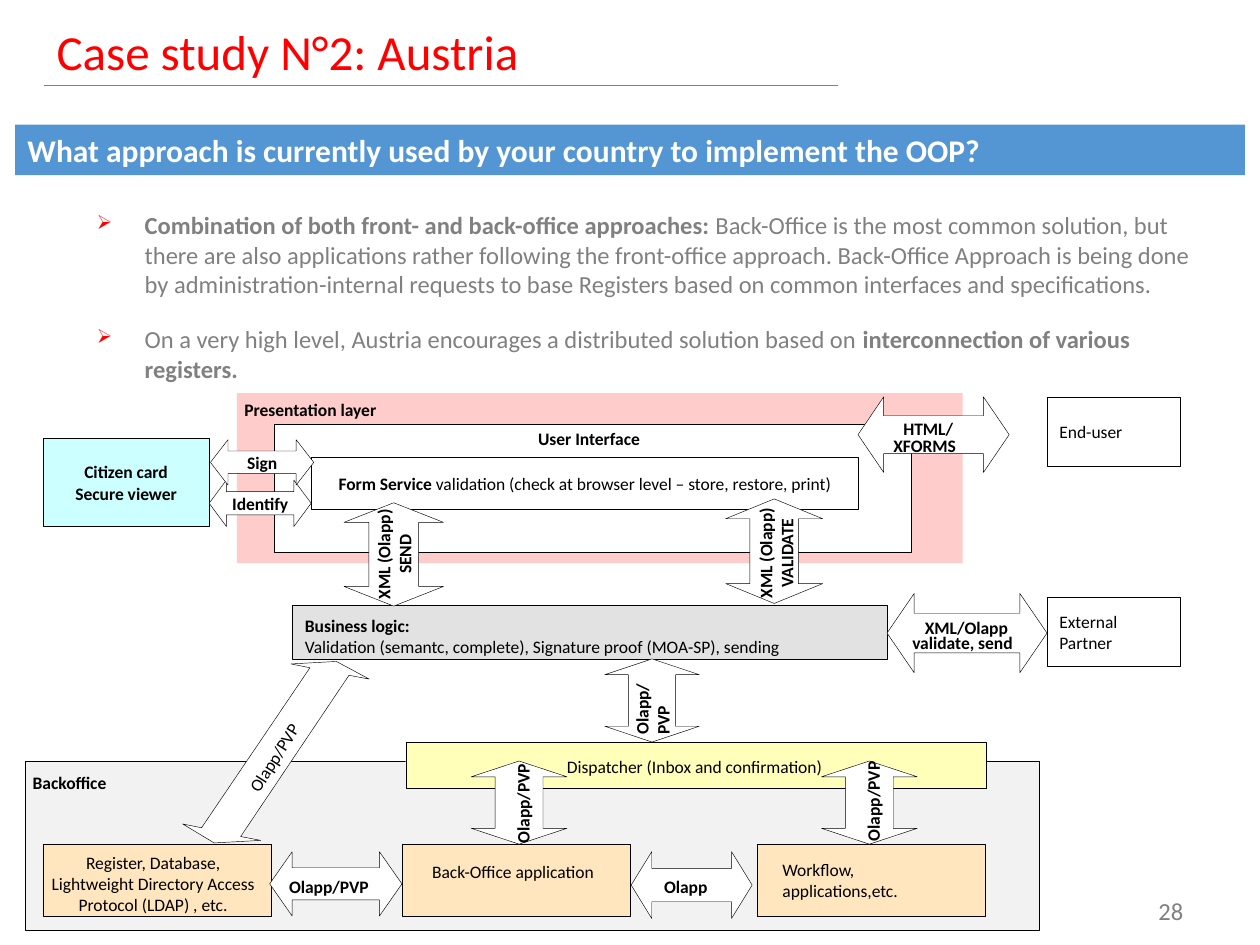
from lxml.etree import SubElement
from pptx import Presentation
from pptx.dml.color import RGBColor
from pptx.enum.shapes import MSO_CONNECTOR as Conn, MSO_SHAPE as Shape
from pptx.enum.text import MSO_ANCHOR as Anchor, PP_ALIGN as Align
from pptx.oxml.ns import qn
from pptx.util import Inches, Pt

LEFT, MID, RIGHT = Align.LEFT, Align.CENTER, Align.RIGHT
color = RGBColor.from_string

deck = Presentation()
deck.slide_width, deck.slide_height = Inches(10), Inches(7.5)
slide = deck.slides.add_slide(deck.slide_layouts[5])
shapes = slide.shapes
cell = deck.slide_width // 100  # grid of 100 columns by 75 rows


def paint(shape, fill, line="000000"):
    shape.shadow.inherit = False
    shape.fill.solid()
    shape.fill.fore_color.rgb = color(fill)
    if line:
        shape.line.color.rgb = color(line)
        shape.line.width = Pt(0.25)
    else:
        shape.line.fill.background()


def write(shape, text, size=10, ink="000000", bold=False, align=LEFT,
          anchor=Anchor.TOP, wrap=True):
    """Lines split at newlines; each | switches between bold and regular."""
    frame = shape.text_frame
    frame.word_wrap, frame.vertical_anchor = wrap, anchor
    frame.text = text.replace("|", "")
    for para, line in zip(frame.paragraphs, text.split("\n")):
        para.alignment = align
        para.text = ""
        for i, part in enumerate(line.split("|")):
            if part:
                run = para.add_run()
                run.text = part
                run.font.name, run.font.size = "Calibri", Pt(size)
                run.font.bold = bold != (i % 2 == 1)
                run.font.color.rgb = color(ink)


# Title, rule and banner
title = shapes.title
title.left, title.top, title.width, title.height = [
    round(n * cell) for n in (3.5, 1.3, 63, 5.5)]
write(title, "Case study N°2: Austria", 28, "FF0000", anchor=Anchor.MIDDLE)
rule = shapes.add_connector(
    Conn.STRAIGHT, *[round(n * cell) for n in (66.5, 6.8, 3.5, 6.8)])
rule.line.color.rgb = color("808080")
rule.line.width = Pt(0.75)
SubElement(rule._element.spPr, qn("a:effectLst"))
banner = shapes.add_shape(
    Shape.RECTANGLE, *[round(n * cell) for n in (1.2, 9.9, 97.6, 4)])
paint(banner, "5496D4", None)
write(banner, "What approach is currently used by your country to implement "
      "the OOP?", 18, "FFFFFF", True)

# Bulleted points
body = shapes.add_textbox(*[round(n * cell) for n in (6.7, 16.2, 90, 14.5)])
write(body, "|Combination of both front- and back-office approaches: |"
      "Back-Office is the most common solution, but there are also "
      "applications rather following the front-office approach. Back-Office "
      "Approach is being done by administration-internal requests to base "
      "Registers based on common interfaces and specifications.\n"
      "On a very high level, Austria encourages a distributed solution based "
      "on |interconnection of various registers.", 14, "808080")
for i, para in enumerate(body.text_frame.paragraphs):
    props = para._p.get_or_add_pPr()
    props.set("marL", str(Inches(0.38)))
    props.set("indent", str(-Inches(0.38)))
    tint = SubElement(props, qn("a:buClr"))
    SubElement(tint, qn("a:srgbClr"), val="FF0000")
    SubElement(props, qn("a:buSzPct"), val="80000")
    SubElement(props, qn("a:buChar"), char="➢")
    para.space_after = Pt(12)
    if i:
        para.space_before = Pt(2.8)

# Layers and boxes: place, fill, outline, text, bold, alignment
boxes = [
    ((2, 60.4, 80.5, 13.4), "F2F2F2", "000000", "", False, LEFT),
    ((18.8, 31.2, 57.6, 13.5), "FFCCCC", None, "", False, LEFT),
    ((21.8, 33.7, 50.5, 10.1), "FFFFFF", "000000", "", False, LEFT),
    ((24.7, 36.3, 43.4, 4.1), "FFFFFF", "000000",
     "Form Service |validation (check at browser level – store, restore, "
     "print)", True, MID),
    ((23.2, 48, 47.2, 4.3), "E2E2E2", "000000", "", False, LEFT),
    ((32.2, 58.9, 46.1, 3.7), "FFFFB9", "000000", "", False, LEFT),
    ((83.1, 31.5, 10.6, 5.5), "FFFFFF", "000000", "End-user", False, LEFT),
    ((83.1, 47.4, 10.6, 5.5), "FFFFFF", "000000", "External Partner", False,
     LEFT),
    ((3.4, 34.8, 13.2, 7), "CCFFFF", "000000", "Citizen card\nSecure viewer",
     True, MID),
]
boxes += [((x, 67, 18.1, 5.7), "FFE6BF", "000000", "", False, LEFT)
          for x in (3.4, 31.9, 60.1)]
for place, fill, line, text, bold, align in boxes:
    box = shapes.add_shape(Shape.RECTANGLE, *[round(n * cell) for n in place])
    paint(box, fill, line)
    if text:
        write(box, text, bold=bold, align=align, anchor=Anchor.MIDDLE)

# Two-headed arrows: place and text; the tall ones stand upright
arrows = [
    ((68.1, 31.5, 12, 6), ""), ((70.4, 47.1, 12.7, 6.3), ""),
    ((50.1, 67.6, 9.6, 5.3), ""), ((21.4, 67.6, 10.5, 5.1), ""),
    ((16.6, 38.1, 8.1, 3.7), "Identify"), ((16.7, 34.9, 8.2, 3.6), "Sign"),
    ((57.6, 39.6, 7.7, 8.3), ""), ((27.3, 39.9, 7.9, 8.2), ""),
    ((48, 52.3, 7.5, 6.6), ""), ((37.4, 60.4, 7.6, 6.6), ""),
    ((65.2, 60.4, 7.6, 6.6), ""),
]
outlines = []
for (x, y, w, h), text in arrows:
    tall = text == "" and w / h < 1.2
    tip = 0.19 if tall else 0.17
    far = 1 - tip
    pts = [(0, 0.5), (tip, 0), (tip, 0.25), (far, 0.25), (far, 0), (1, 0.5),
           (far, 1), (far, 0.75), (tip, 0.75), (tip, 1), (tip, 0.75)]
    pts[-2:] = [(tip, 1)]
    if tall:
        pts = [(b, a) for a, b in pts]
    outlines.append(([(x + a * w, y + b * h) for a, b in pts], text))
slant = [(16, 65.7), (14.5, 65.4), (17, 66.9), (20.7, 66.7), (19.1, 66.4),
         (27.7, 53.6), (29.3, 53.9), (26.7, 52.5), (23.1, 52.7), (24.6, 53)]
outlines.append((slant, ""))
for pts, text in outlines:
    first, *rest = [(round(a * cell), round(b * cell)) for a, b in pts]
    pen = shapes.build_freeform(*first)
    pen.add_line_segments(rest, close=True)
    arrow = pen.convert_to_shape()
    paint(arrow, "FFFFFF")
    if text:
        write(arrow, text, bold=True, align=MID, anchor=Anchor.MIDDLE)

# Labels: place, text, bold, alignment, wrap, turn
labels = [
    ((2.6, 61.3, 6, 1.7), "Backoffice", True, LEFT, False, 0),
    ((19.4, 31.7, 10.7, 1.7), "Presentation layer", True, LEFT, False, 0),
    ((42.7, 34, 8.2, 1.7), "User Interface", True, LEFT, False, 0),
    ((71.7, 33.2, 4, 1.7), "HTML/", True, LEFT, False, 0),
    ((70.9, 34.5, 5.1, 1.7), "XFORMS", True, LEFT, False, 0),
    ((24.2, 48.8, 46.2, 3.4), "Business logic:\n|Validation (semantc, "
     "complete), Signature proof (MOA-SP), sending", True, LEFT, True, 0),
    ((73.4, 49, 6.7, 1.7), "XML/Olapp", True, LEFT, False, 0),
    ((72.4, 50.2, 8.1, 1.7), "validate, send", True, LEFT, False, 0),
    ((45, 60, 20.6, 1.7), "Dispatcher (Inbox and confirmation)", False, LEFT,
     False, 0),
    ((57.7, 42.2, 7.8, 3.4), "XML (Olapp)\nVALIDATE", True, MID, True, 270),
    ((27.2, 42.3, 8.2, 3.4), "XML (Olapp)\nSEND", True, MID, True, 270),
    ((48.8, 53.6, 6, 3.4), "Olapp/PVP", True, LEFT, True, 270),
    ((38.3, 62.9, 6.4, 1.7), "Olapp/PVP", True, LEFT, False, 270),
    ((66.1, 62.7, 6.4, 1.7), "Olapp/PVP", True, LEFT, False, 270),
    ((18.7, 59.3, 6.1, 1.7), "Olapp/PVP", False, LEFT, False, 302.5),
    ((22.9, 69.5, 6.4, 1.7), "Olapp/PVP", True, MID, False, 0),
    ((52.7, 69.5, 3.5, 1.7), "Olapp", True, LEFT, False, 0),
    ((3.5, 67.6, 17.3, 5.1), "Register, Database, Lightweight Directory "
     "Access Protocol (LDAP) , etc.", False, MID, True, 0),
    ((34.3, 68.3, 14.1, 1.7), "Back-Office application", False, LEFT, True, 0),
    ((62.1, 68.2, 12.5, 3.4), "Workflow, applications,etc.", False, LEFT,
     True, 0),
]
for place, text, bold, align, wrap, turn in labels:
    label = shapes.add_textbox(*[round(n * cell) for n in place])
    frame = label.text_frame
    frame.margin_left = frame.margin_right = 0
    frame.margin_top = frame.margin_bottom = 0
    write(label, text, bold=bold, align=align, wrap=wrap)
    label.rotation = turn

# Page number
page = shapes.add_textbox(*[round(n * cell) for n in (87.8, 70.6, 7.1, 4.4)])
write(page, "28", 14, "808080", align=RIGHT)

deck.save("out.pptx")
